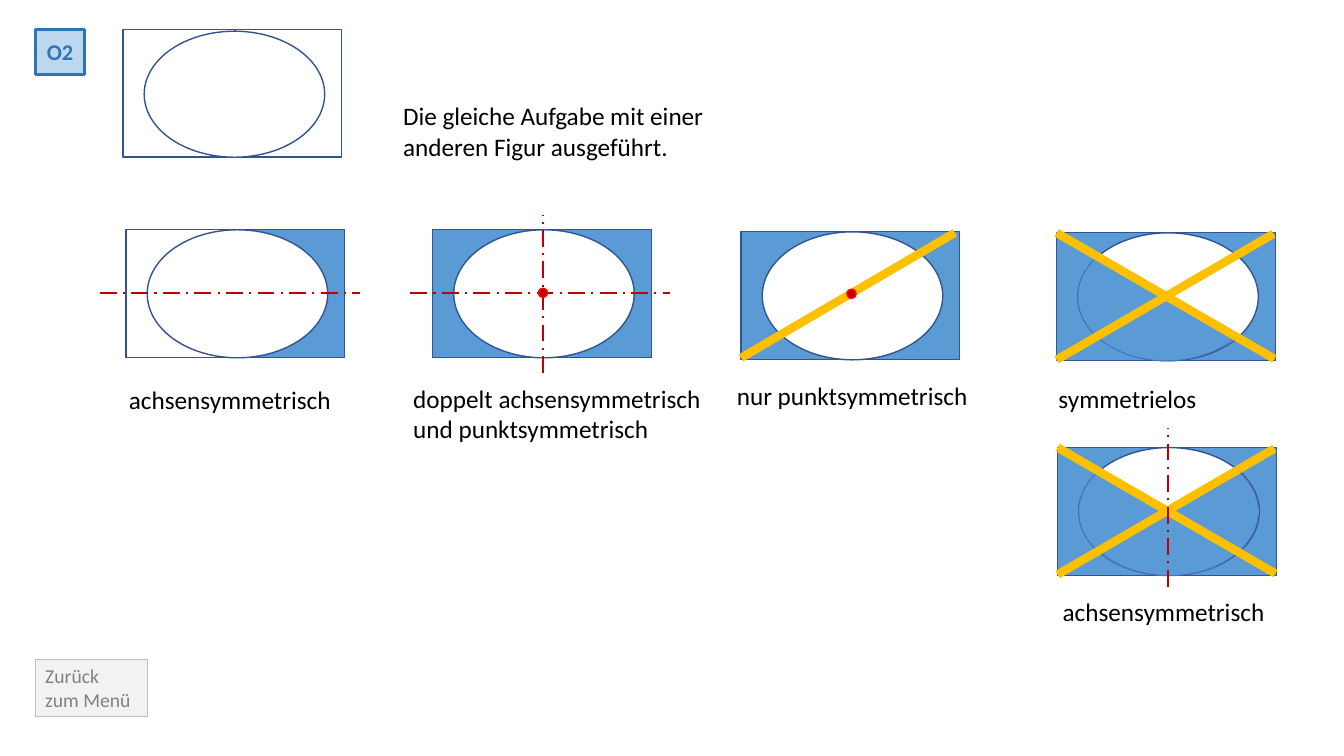
"""Build the slide on symmetry of a rectangle with an inscribed ellipse."""
from dataclasses import dataclass

from lxml import etree
from pptx import Presentation
from pptx.dml.color import RGBColor
from pptx.enum.dml import MSO_LINE
from pptx.enum.shapes import MSO_CONNECTOR, MSO_SHAPE
from pptx.enum.text import MSO_ANCHOR, MSO_AUTO_SIZE, PP_ALIGN
from pptx.oxml.ns import qn
from pptx.util import Emu, Pt

EMU_PER_PX = 9144
FONT = "Calibri"

BLACK = RGBColor(0x00, 0x00, 0x00)
WHITE = RGBColor(0xFF, 0xFF, 0xFF)
BLUE = RGBColor(0x5B, 0x9B, 0xD5)
OUTLINE = RGBColor(0x32, 0x54, 0x91)
ARC_LINE = RGBColor(0x44, 0x72, 0xC4)
BADGE_FILL = RGBColor(0xBD, 0xD7, 0xEE)
BADGE_LINE = RGBColor(0x2E, 0x75, 0xB6)
BUTTON_FILL = RGBColor(0xF2, 0xF2, 0xF2)
BUTTON_LINE = RGBColor(0xBF, 0xBF, 0xBF)
GREY = RGBColor(0x80, 0x80, 0x80)
GOLD = RGBColor(0xFF, 0xC0, 0x00)
DARK_RED = RGBColor(0xC0, 0x00, 0x00)
RED = RGBColor(0xFF, 0x00, 0x00)

RECTANGLE = MSO_SHAPE.RECTANGLE
OVAL = MSO_SHAPE.OVAL
ARC = MSO_SHAPE.ARC
STRAIGHT = MSO_CONNECTOR.STRAIGHT
DASH_DOT = MSO_LINE.LONG_DASH_DOT
TOP, MIDDLE = MSO_ANCHOR.TOP, MSO_ANCHOR.MIDDLE
LEFT, CENTER = PP_ALIGN.LEFT, PP_ALIGN.CENTER
FIT_SHAPE, FIT_NONE = MSO_AUTO_SIZE.SHAPE_TO_FIT_TEXT, MSO_AUTO_SIZE.NONE

HALF_WIDTH, HALF_OFFSET, FIGURE_HEIGHT = 111, 106, 127
ELLIPSE_OFFSET, ELLIPSE_WIDTH = 21, 179
ARC_WIDTH = 176
ARC_ANGLES = (198.1, 90.1)
DOT_SIZE = 9
RISING = (0, 126, 215, 1)
FALLING = (216, 125, 0, 0)


@dataclass(frozen=True)
class HalfEllipse:
    """A filled half of the ellipse, offset from the figure's left edge."""
    offset: int
    flipped: bool


@dataclass(frozen=True)
class Figure:
    """A rectangle in two halves with an ellipse, half ellipses and diagonals."""
    left: int
    top: int
    left_fill: RGBColor = BLUE
    right_fill: RGBColor = BLUE
    ellipse_drop: int = 0
    half_ellipses: tuple[HalfEllipse, ...] = ()
    diagonals: tuple[tuple[int, int, int, int], ...] = ()


@dataclass(frozen=True)
class Caption:
    """A text box."""
    text: str
    left: int
    top: int
    width: int
    height: int


LEFT_HALF = HalfEllipse(21, True)
RIGHT_HALF = HalfEllipse(23, False)

FIGURES = (
    Figure(122, 29, WHITE, WHITE, ellipse_drop=2),
    Figure(125, 228, left_fill=WHITE),
    Figure(429, 228),
    Figure(735, 230, diagonals=((0, 125, 212, 1),)),
    Figure(1048, 231, half_ellipses=(LEFT_HALF,), diagonals=(RISING, FALLING)),
    Figure(1049, 444, half_ellipses=(LEFT_HALF, RIGHT_HALF), diagonals=(FALLING, RISING)),
)
AXES = (
    (99, 291, 357, 291),
    (407, 291, 665, 291),
    (539, 370, 539, 213),
    (1158, 582, 1158, 425),
)
CENTERS = ((534, 286), (840, 287))
CAPTIONS = (
    Caption("Die gleiche Aufgabe mit einer anderen Figur ausgeführt.", 390, 95, 346, 71),
    Caption("achsensymmetrisch", 118, 376, 238, 40),
    Caption("doppelt achsensymmetrisch und punktsymmetrisch", 400, 375, 322, 71),
    Caption("nur punktsymmetrisch", 721, 372, 267, 40),
    Caption("symmetrielos", 1040, 375, 267, 40),
    Caption("achsensymmetrisch", 1044, 587, 238, 40),
)


def px(*lengths: int) -> list[Emu]:
    """Turn px into EMU."""
    return [Emu(length * EMU_PER_PX) for length in lengths]


def add_filled(shapes, kind, box, fill: RGBColor, line: RGBColor, weight: float = 1):
    """Add a preset shape with a solid fill and outline."""
    shape = shapes.add_shape(kind, *px(*box))
    shape.shadow.inherit = False
    shape.fill.solid()
    shape.fill.fore_color.rgb = fill
    shape.line.color.rgb = line
    shape.line.width = Pt(weight)
    return shape


def add_line(shapes, ends, color: RGBColor, weight: float, dash=None) -> None:
    """Add a straight line without a shadow."""
    connector = shapes.add_connector(STRAIGHT, *px(*ends))
    connector.line.color.rgb = color
    connector.line.width = Pt(weight)
    if dash is not None:
        connector.line.dash_style = dash
    etree.SubElement(connector.element.spPr, qn("a:effectLst"))


def write_text(shape, text: str, *, size: int = 18, color: RGBColor = BLACK,
               bold: bool = False, align=LEFT, anchor=TOP, fit=FIT_SHAPE) -> None:
    """Write one formatted paragraph into a shape."""
    frame = shape.text_frame
    frame.word_wrap = True
    frame.auto_size = fit
    frame.vertical_anchor = anchor
    paragraph = frame.paragraphs[0]
    paragraph.alignment = align
    run = paragraph.add_run()
    run.text = text
    run.font.name = FONT
    run.font.size = Pt(size)
    run.font.bold = bold
    run.font.color.rgb = color


def add_figure(slide, figure: Figure) -> None:
    """Draw one figure as a group."""
    shapes = slide.shapes.add_group_shape().shapes
    left, top = figure.left, figure.top
    for offset, fill in ((HALF_OFFSET, figure.right_fill), (0, figure.left_fill)):
        box = (left + offset, top, HALF_WIDTH, FIGURE_HEIGHT)
        add_filled(shapes, RECTANGLE, box, fill, OUTLINE)
    drop = figure.ellipse_drop
    ellipse_box = (left + ELLIPSE_OFFSET, top + drop, ELLIPSE_WIDTH, FIGURE_HEIGHT - drop)
    add_filled(shapes, OVAL, ellipse_box, WHITE, OUTLINE)
    for half in figure.half_ellipses:
        box = (left + half.offset, top, ARC_WIDTH, FIGURE_HEIGHT)
        arc = add_filled(shapes, ARC, box, BLUE, ARC_LINE, 0.5)
        arc.adjustments[0], arc.adjustments[1] = ARC_ANGLES
        if half.flipped:
            arc.element.spPr.find(qn("a:xfrm")).set("flipH", "1")
    for x1, y1, x2, y2 in figure.diagonals:
        add_line(shapes, (left + x1, top + y1, left + x2, top + y2), GOLD, 6)


def main() -> None:
    """Build and save the presentation."""
    presentation = Presentation()
    presentation.slide_width, presentation.slide_height = px(1333, 750)
    slide = presentation.slides.add_slide(presentation.slide_layouts[6])
    shapes = slide.shapes

    badge = add_filled(shapes, RECTANGLE, (35, 29, 49, 45), BADGE_FILL, BADGE_LINE, 2.25)
    write_text(badge, "O2", size=16, color=BADGE_LINE, bold=True,
               align=CENTER, anchor=MIDDLE, fit=FIT_NONE)
    button = add_filled(shapes, RECTANGLE, (35, 654, 111, 57), BUTTON_FILL, BUTTON_LINE, 0.75)
    write_text(button, "Zurück zum Menü", size=14, color=GREY)

    for figure in FIGURES:
        add_figure(slide, figure)
    for axis in AXES:
        add_line(shapes, axis, DARK_RED, 1.5, DASH_DOT)
    for left, top in CENTERS:
        add_filled(shapes, OVAL, (left, top, DOT_SIZE, DOT_SIZE), DARK_RED, RED)
    for caption in CAPTIONS:
        box = px(caption.left, caption.top, caption.width, caption.height)
        write_text(shapes.add_textbox(*box), caption.text)

    presentation.save("out.pptx")


if __name__ == "__main__":
    main()
